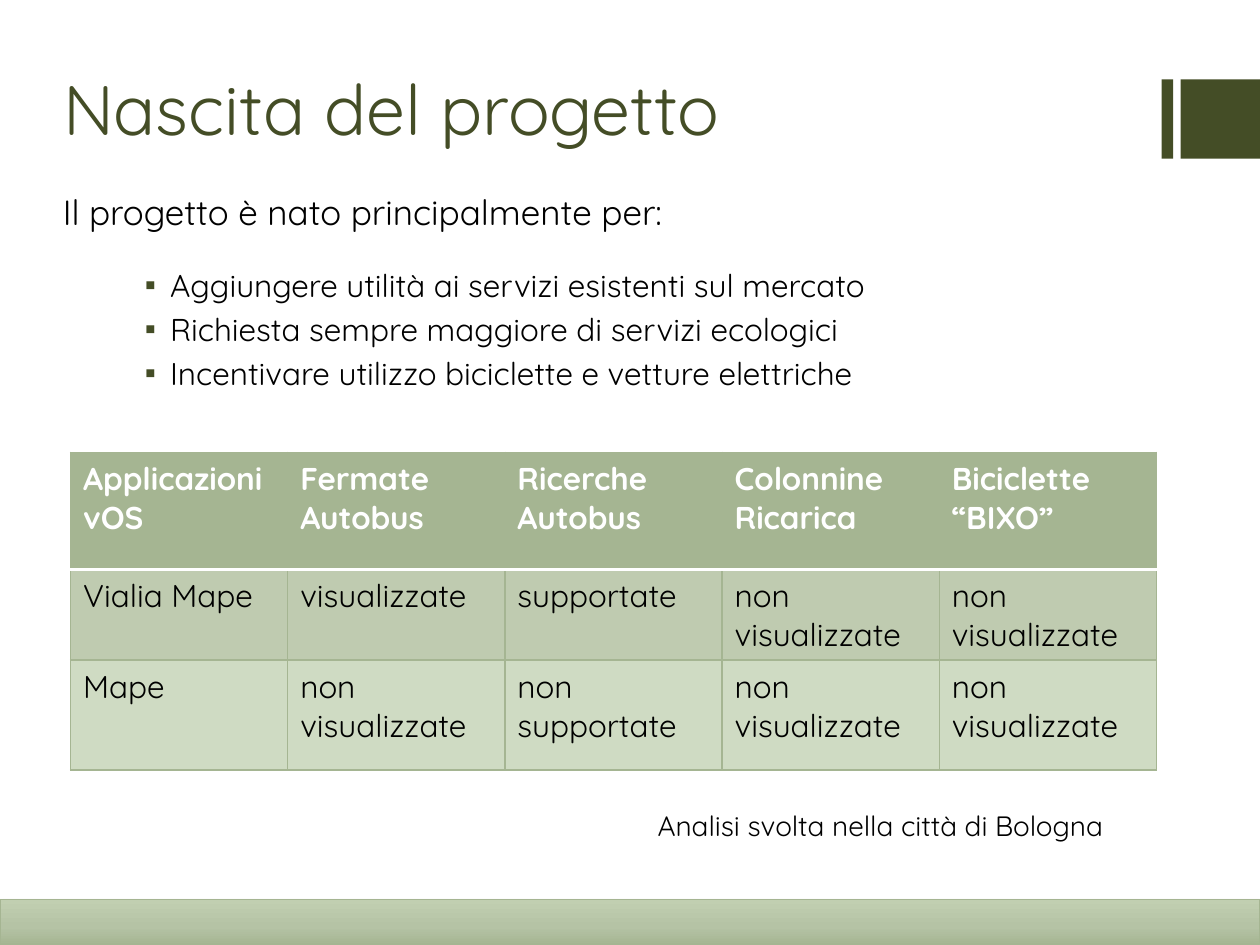
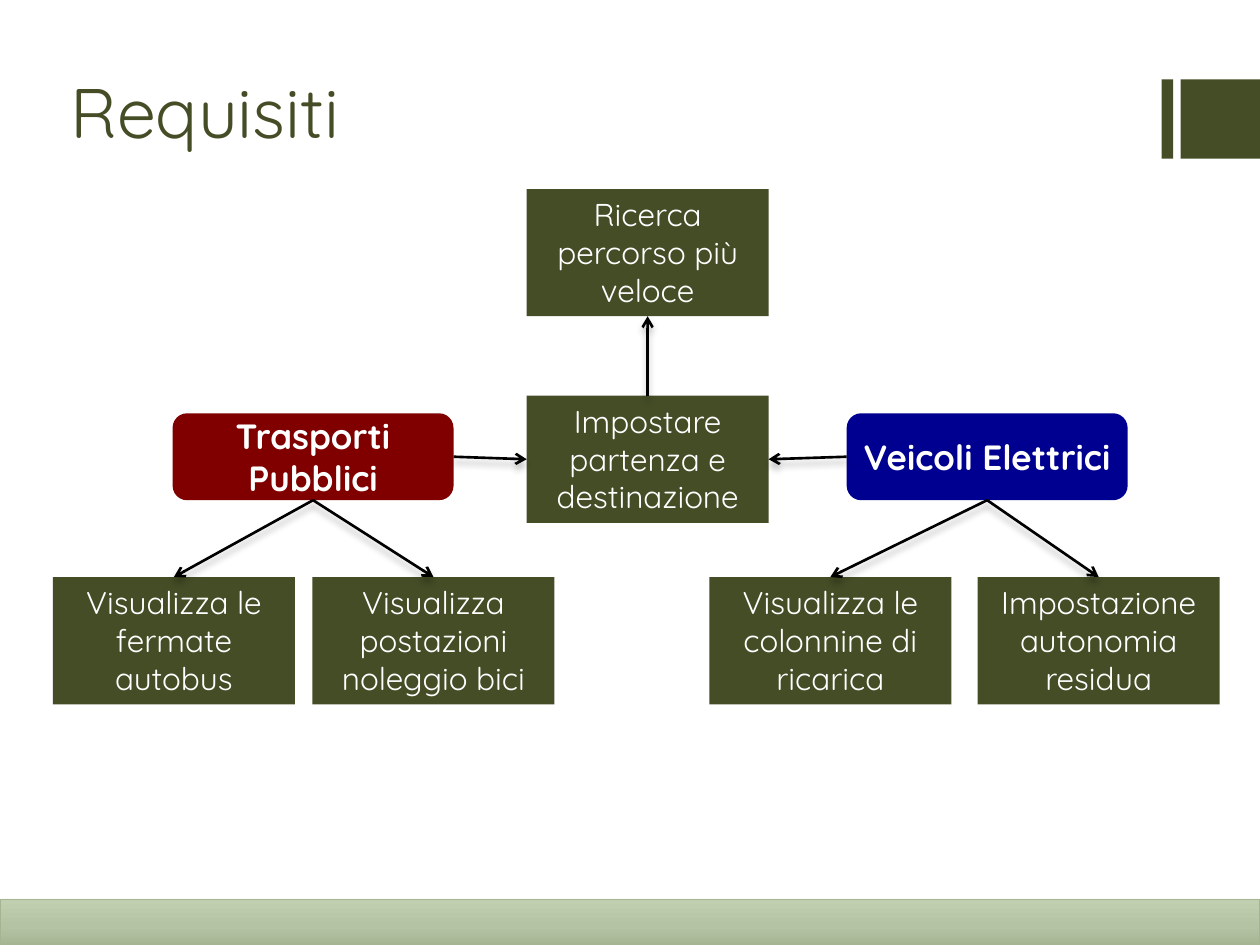
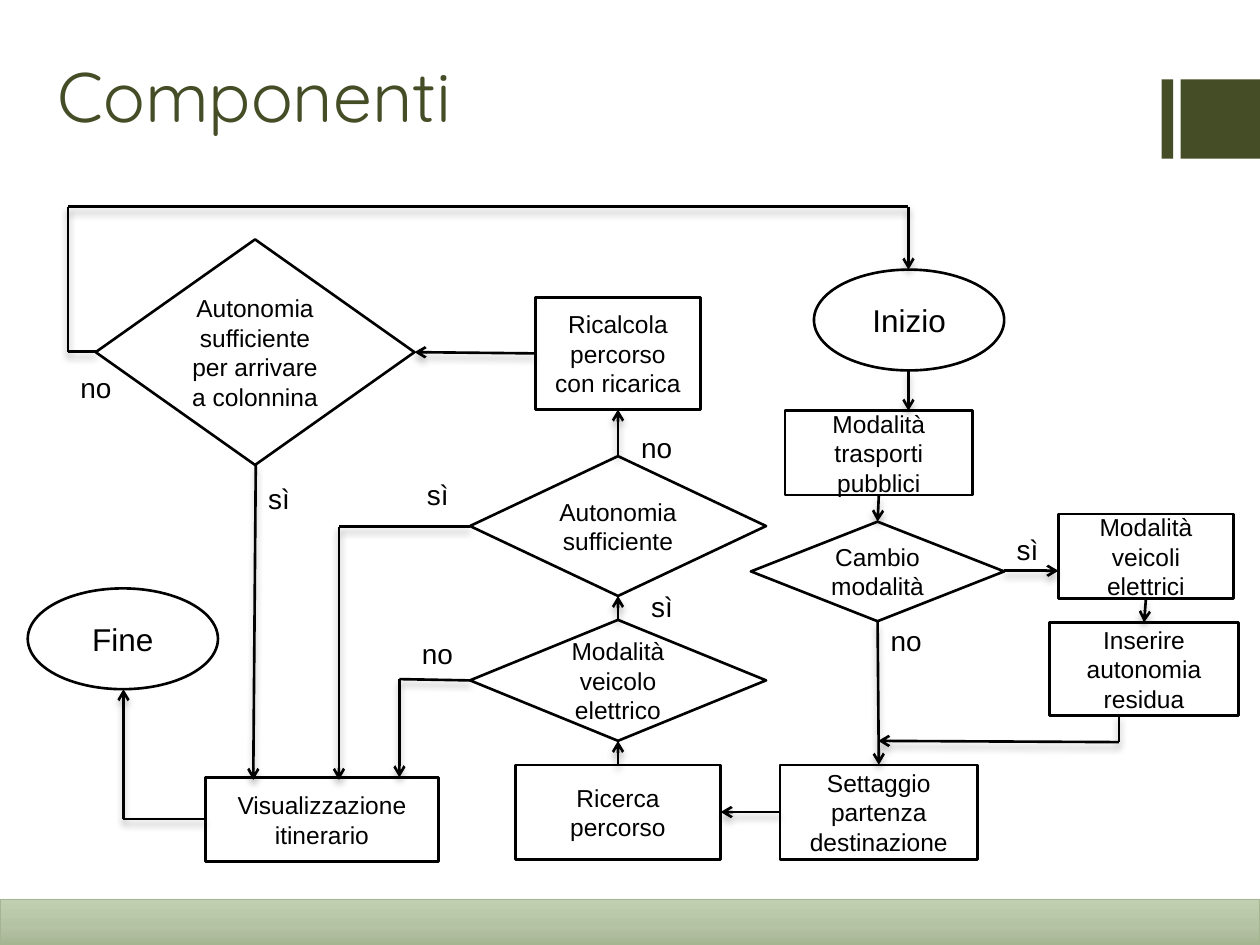
from copy import deepcopy

from lxml.etree import SubElement
from pptx import Presentation
from pptx.dml.color import RGBColor
from pptx.enum.shapes import MSO_CONNECTOR, MSO_SHAPE
from pptx.enum.text import MSO_ANCHOR, MSO_AUTO_SIZE, PP_ALIGN
from pptx.oxml.ns import qn
from pptx.util import Inches, Pt

OLIVE = RGBColor(0x44, 0x4D, 0x26)
SAGE = RGBColor(0xA5, 0xB5, 0x92)
SAGE_MID = RGBColor(0xB5, 0xC3, 0xA5)
SAGE_LIGHT = RGBColor(0xC1, 0xCF, 0xB1)
ROW_DARK = RGBColor(0xBF, 0xCB, 0xB0)
ROW_LIGHT = RGBColor(0xCF, 0xDB, 0xC3)
RED = RGBColor(0x80, 0, 0)
BLUE = RGBColor(0, 0, 0x90)
BLACK = RGBColor(0, 0, 0)
WHITE = RGBColor(0xFF, 0xFF, 0xFF)
FONT = "Quicksand"
FLOW_FONT = "Arial"
TITLE_ONLY, TITLE_BODY = 5, 1
TOP, LEFT, BOTTOM, RIGHT = range(4)  # connection sites


# Shared helpers
def inches(*values):
    return [Inches(v) for v in values]


def write(tf, text, size, color=BLACK, font=FONT, bold=False, align=PP_ALIGN.LEFT):
    """Write one paragraph per line of text."""
    tf.word_wrap = True
    for i, line in enumerate(text.split("\n")):
        p = tf.paragraphs[0] if i == 0 else tf.add_paragraph()
        p.alignment = align
        r = p.add_run()
        r.text = line
        r.font.name, r.font.size = font, Pt(size)
        r.font.bold, r.font.color.rgb = bold, color


def add_shadow(shape, alpha, blur):
    sp_pr = shape.element.find(qn("p:spPr"))
    for old in sp_pr.findall(qn("a:effectLst")):
        sp_pr.remove(old)
    effects = SubElement(sp_pr, qn("a:effectLst"))
    shadow = SubElement(effects, qn("a:outerShdw"), blurRad=str(Pt(blur)),
                        dist=str(Pt(3)), dir="5400000", rotWithShape="0")
    color = SubElement(shadow, qn("a:srgbClr"), val=str(BLACK))
    SubElement(color, qn("a:alpha"), val=str(alpha * 1000))


def add_node(slide, geom, box, fill, line=None):
    s = slide.shapes.add_shape(geom, *inches(*box))
    s.shadow.inherit = False
    s.fill.solid()
    s.fill.fore_color.rgb = fill
    if line is None:
        s.line.fill.background()
    else:
        s.line.color.rgb = line
        s.line.width = Pt(1.5)
    return s


def add_label(slide, box, text, size, font=FONT):
    tf = slide.shapes.add_textbox(*inches(*box)).text_frame
    write(tf, text, size, font=font)
    tf.auto_size = MSO_AUTO_SIZE.SHAPE_TO_FIT_TEXT


def add_line(slide, start, end, arrow=True):
    c = slide.shapes.add_connector(MSO_CONNECTOR.STRAIGHT, *inches(*start, *end))
    c.line.color.rgb = BLACK
    c.line.width = Pt(1.5)
    if arrow:
        SubElement(c.element.find(".//" + qn("a:ln")), qn("a:tailEnd"), type="arrow")
    add_shadow(c, 28, 4)
    return c


def link(slide, source, source_site, target, target_site):
    c = add_line(slide, (0, 0), (1, 1))
    c.begin_connect(source, source_site)
    c.end_connect(target, target_site)


# Slide frame
def add_master_marks(prs, slide):
    """Place the two olive blocks on the slide master."""
    for left, width in ((9.22, 0.09), (9.37, 0.63)):
        s = add_node(slide, MSO_SHAPE.RECTANGLE, (left, 0.63, width, 0.63), OLIVE)
        prs.slide_master.shapes.element.append(s.element)


def add_footer_band(slide):
    s = add_node(slide, MSO_SHAPE.RECTANGLE, (0, 7.14, 10, 0.36), SAGE, SAGE)
    s.line.width = Pt(1)
    s.fill.gradient()
    s.fill.gradient_angle = 270
    stops = s.element.find(".//" + qn("a:gsLst"))
    stops.insert(1, deepcopy(stops[0]))
    colors = (SAGE_LIGHT, SAGE_MID, SAGE)
    for stop, color, position in zip(s.fill.gradient_stops, colors, (0, 0.6, 1)):
        stop.color.rgb = color
        stop.position = position
    add_shadow(s, 48, 3.8)


def new_slide(prs, layout, title, box, anchor=MSO_ANCHOR.TOP):
    slide = prs.slides.add_slide(prs.slide_layouts[layout])
    place(slide.shapes.title, box)
    tf = slide.shapes.title.text_frame
    write(tf, title, 40, OLIVE)
    tf.auto_size = MSO_AUTO_SIZE.NONE
    tf.vertical_anchor = anchor
    add_footer_band(slide)
    return slide


def place(shape, box):
    shape.left, shape.top, shape.width, shape.height = inches(*box)


# Slide 1: reasons and comparison table
def fill_bullets(body, box, items):
    place(body, box)
    tf = body.text_frame
    write(tf, "\n".join(items), 18)
    tf.auto_size = MSO_AUTO_SIZE.NONE
    for p in tf.paragraphs:
        p_pr = p._p.get_or_add_pPr()
        p_pr.set("marL", str(Inches(0.25)))
        p_pr.set("indent", str(Inches(-0.2)))
        color = SubElement(p_pr, qn("a:buClr"))
        SubElement(color, qn("a:srgbClr"), val=str(OLIVE))
        SubElement(p_pr, qn("a:buFont"), typeface=FLOW_FONT)
        SubElement(p_pr, qn("a:buChar"), char="▪")


def set_border(cell, side, color, width):
    ln = SubElement(cell._tc.get_or_add_tcPr(), qn("a:" + side), w=str(Pt(width)))
    fill = SubElement(ln, qn("a:solidFill"))
    SubElement(fill, qn("a:srgbClr"), val=str(color))


def add_comparison(slide, box, rows, heights):
    table = slide.shapes.add_table(len(rows), len(rows[0]), *inches(*box)).table
    for column in table.columns:
        column.width = Inches(box[2] / len(rows[0]))
    fills = (SAGE, ROW_DARK, ROW_LIGHT)
    for i, (texts, height, fill) in enumerate(zip(rows, heights, fills)):
        table.rows[i].height = Inches(height)
        head = i == 0
        for j, text in enumerate(texts):
            cell = table.cell(i, j)
            write(cell.text_frame, text, 18, WHITE if head else BLACK, bold=head)
            for side in ("lnL", "lnR", "lnT", "lnB"):
                white = (side == "lnB" and head) or (side == "lnT" and i == 1)
                set_border(cell, side, WHITE if white else SAGE, 1.5 if white else 1)
            cell.fill.solid()
            cell.fill.fore_color.rgb = fill


def build_origin(prs):
    slide = new_slide(prs, TITLE_BODY, "Nascita del progetto", (0.4, 0.47, 5.84, 0.77))
    add_master_marks(prs, slide)
    add_label(slide, (0.4, 1.46, 5.35, 0.44), "Il progetto è nato principalmente per:", 20)
    fill_bullets(slide.placeholders[1], (1, 2.06, 6.6, 1.19), (
        "Aggiungere utilità ai servizi esistenti sul mercato",
        "Richiesta sempre maggiore di servizi ecologici",
        "Incentivare utilizzo biciclette e vetture elettriche"))
    hidden = "non visualizzate"
    add_comparison(slide, (0.56, 3.59, 8.62, 2.52), (
        ("Applicazioni vOS", "Fermate\nAutobus", "Ricerche Autobus",
         "Colonnine Ricarica", "Biciclette\n“BIXO”"),
        ("Vialia Mape", "visualizzate", "supportate", hidden, hidden),
        ("Mape", "non\nvisualizzate", "non supportate", hidden, hidden),
    ), (0.93, 0.72, 0.87))
    add_label(slide, (5.12, 6.37, 3.95, 0.37), "Analisi svolta nella città di Bologna", 16)


# Slide 2: requirements tree
def add_requirements(slide, x, y):
    def requirement(dx, dy, text):
        s = add_node(slide, MSO_SHAPE.RECTANGLE, (x + dx, y + dy, 1.92, 1.01), OLIVE)
        write(s.text_frame, text, 18, WHITE, align=PP_ALIGN.CENTER)
        s.text_frame.vertical_anchor = MSO_ANCHOR.TOP
        return s

    def group(dx, text, fill, children):
        s = add_node(slide, MSO_SHAPE.ROUNDED_RECTANGLE,
                     (x + dx, y + 1.78, 2.23, 0.69), fill)
        tf = s.text_frame
        tf.margin_left = tf.margin_right = Inches(0.08)
        write(tf, text, 20, WHITE, bold=True, align=PP_ALIGN.CENTER)
        tf.vertical_anchor = MSO_ANCHOR.MIDDLE
        for child_dx, child_text in children:
            link(slide, s, BOTTOM, requirement(child_dx, 3.08, child_text), TOP)
        return s

    fastest = requirement(3.76, 0, "Ricerca percorso più veloce")
    route = requirement(3.76, 1.64, "Impostare partenza e destinazione")
    public = group(0.95, "Trasporti Pubblici", RED, (
        (0, "Visualizza le fermate autobus"),
        (2.06, "Visualizza postazioni noleggio bici")))
    electric = group(6.3, "Veicoli Elettrici", BLUE, (
        (5.21, "Visualizza le colonnine di ricarica"),
        (7.34, "Impostazione autonomia residua")))
    link(slide, public, RIGHT, route, LEFT)
    link(slide, electric, LEFT, route, RIGHT)
    link(slide, route, TOP, fastest, BOTTOM)


def build_requirements(prs):
    slide = new_slide(prs, TITLE_ONLY, "Requisiti", (0.46, 0.47, 2.82, 0.79),
                      MSO_ANCHOR.BOTTOM)
    add_requirements(slide, 0.42, 1.5)


# Slide 3: flowchart
def add_flowchart(slide, x, y):
    def step(geom, box, text, size=14):
        dx, dy, width, height = box
        s = add_node(slide, geom, (x + dx, y + dy, width, height), WHITE, BLACK)
        write(s.text_frame, text, size, font=FLOW_FONT, align=PP_ALIGN.CENTER)
        s.text_frame.vertical_anchor = MSO_ANCHOR.MIDDLE
        return s

    def terminal(dx, dy, text):
        step(MSO_SHAPE.FLOWCHART_CONNECTOR, (dx, dy, 1.51, 0.8), text, 18)

    def process(box, text):
        return step(MSO_SHAPE.FLOWCHART_PROCESS, box, text)

    def decision(box, text):
        return step(MSO_SHAPE.FLOWCHART_DECISION, box, text)

    terminal(6.46, 0.64, "Inizio")
    terminal(0.22, 3.17, "Fine")
    transit = process((6.23, 1.76, 1.49, 0.67), "Modalità trasporti pubblici")
    vehicles = process((8.4, 2.58, 1.39, 0.67), "Modalità veicoli elettrici")
    residual = process((8.33, 3.44, 1.5, 0.74), "Inserire autonomia residua")
    setting = process((6.19, 4.57, 1.57, 0.75), "Settaggio partenza destinazione")
    search = process((4.09, 4.57, 1.63, 0.75), "Ricerca percorso")
    process((1.63, 4.67, 1.85, 0.67), "Visualizzazione itinerario")
    recalc = process((4.25, 0.86, 1.31, 0.89), "Ricalcola percorso con ricarica")
    change = decision((5.96, 2.64, 2.01, 0.79), "Cambio modalità")
    is_electric = decision((3.73, 3.42, 2.35, 0.96), "Modalità veicolo elettrico")
    enough = decision((3.73, 2.12, 2.35, 1.11), "Autonomia sufficiente")
    reach = decision((0.76, 0.4, 2.53, 1.79),
                     "Autonomia sufficiente per arrivare a colonnina")

    # Straight links between steps
    for ends in ((transit, BOTTOM, change, TOP), (change, BOTTOM, setting, TOP),
                 (vehicles, BOTTOM, residual, TOP), (setting, LEFT, search, RIGHT),
                 (search, TOP, is_electric, BOTTOM), (is_electric, TOP, enough, BOTTOM),
                 (enough, TOP, recalc, BOTTOM), (recalc, LEFT, reach, RIGHT)):
        link(slide, *ends)

    # Bent paths, with the arrowhead on the last segment
    for points in (((7.21, 1.44), (7.21, 1.76)),
                   ((7.97, 3.03), (8.4, 3.03)),
                   ((8.88, 4.17), (8.88, 4.39), (6.97, 4.38)),
                   ((3.73, 3.9), (3.17, 3.89), (3.17, 4.67)),
                   ((3.73, 2.68), (2.69, 2.68), (2.69, 4.69)),
                   ((2.03, 2.19), (2.01, 4.69)),
                   ((1.63, 5), (0.98, 5), (0.98, 3.97)),
                   ((0.76, 1.29), (0.54, 1.29), (0.54, 0.14), (7.21, 0.14), (7.21, 0.64))):
        shifted = [(x + dx, y + dy) for dx, dy in points]
        for start, end in zip(shifted, shifted[1:]):
            add_line(slide, start, end, arrow=end is shifted[-1])

    # Branch labels
    branches = {"sì": ((5.07, 3.13), (7.97, 2.68), (3.29, 2.24), (2.03, 2.27)),
                "no": ((3.25, 3.5), (6.97, 3.4), (4.99, 1.87), (0.54, 1.39))}
    for text, spots in branches.items():
        for dx, dy in spots:
            add_label(slide, (x + dx, y + dy, 0.45, 0.37), text, 16, FLOW_FONT)


def build_components(prs):
    slide = new_slide(prs, TITLE_ONLY, "Componenti", (0.36, 0.37, 3.65, 0.77))
    add_flowchart(slide, 0, 1.5)


def main():
    prs = Presentation()
    prs.slide_width, prs.slide_height = inches(10, 7.5)
    build_origin(prs)
    build_requirements(prs)
    build_components(prs)
    prs.save("out.pptx")


if __name__ == "__main__":
    main()
